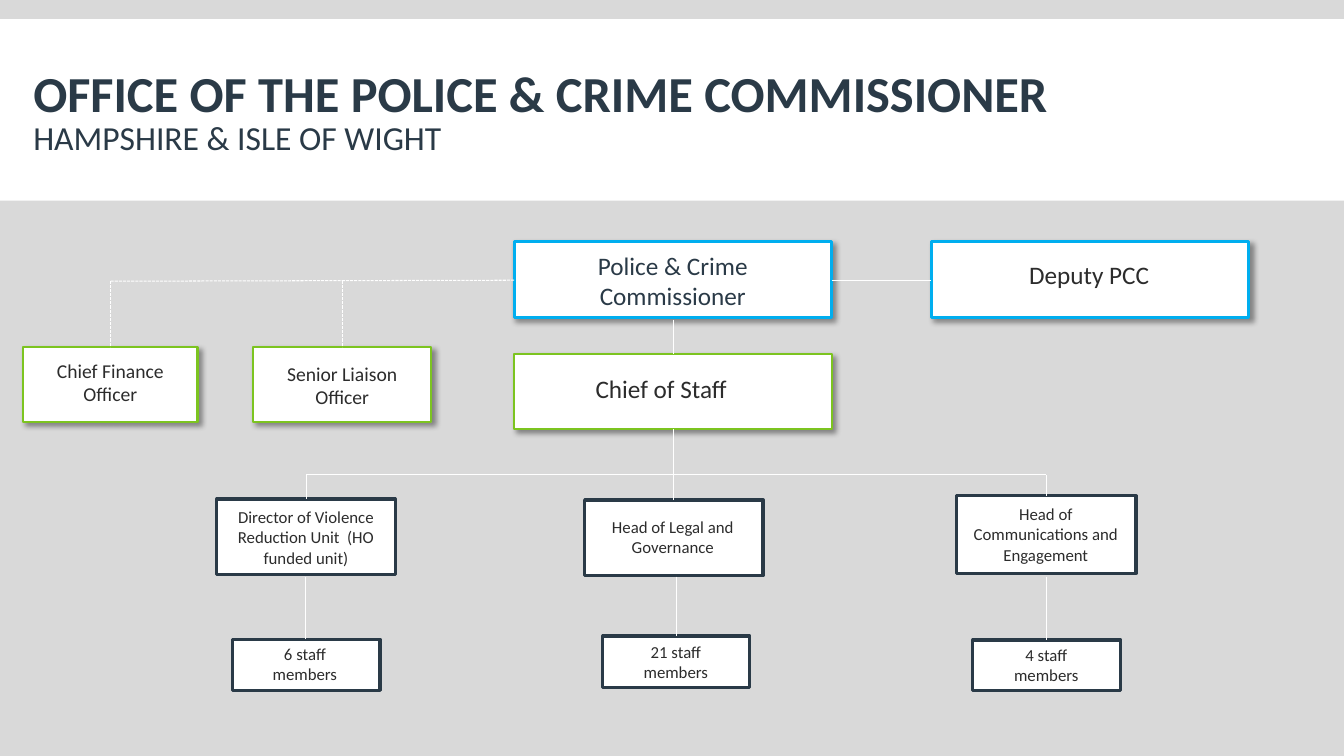
import dataclasses

import lxml.etree
import pptx
import pptx.dml.color
import pptx.enum.dml
import pptx.enum.shapes
import pptx.enum.text
import pptx.oxml.ns
import pptx.util

COLUMNS, ROWS = 133.33, 75


@dataclasses.dataclass(frozen=True)
class Theme:
    font: str = "Calibri"
    background: str = "D9D9D9"
    white: str = "FFFFFF"
    navy: str = "2A3A47"
    text: str = "2C2C2C"
    blue: str = "00AEEF"
    green: str = "7CC420"
    title: int = 36
    subtitle: int = 24
    leader: int = 18
    officer: int = 14
    team: int = 12
    thick: float = 2.25
    medium: float = 1.5
    thin: float = 0.75


class Chart:
    def __init__(self, presentation, theme):
        self.theme = theme
        self.column = presentation.slide_width / COLUMNS
        self.row = presentation.slide_height / ROWS
        self.slide = presentation.slides.add_slide(presentation.slide_layouts[5])
        self.paint(self.slide.background.fill, theme.background)

    def across(self, columns):
        return pptx.util.Emu(round(columns * self.column))

    def down(self, rows):
        return pptx.util.Emu(round(rows * self.row))

    def frame(self, left, top, width, height):
        return self.across(left), self.down(top), self.across(width), self.down(height)

    def paint(self, fill, color):
        fill.solid()
        fill.fore_color.rgb = pptx.dml.color.RGBColor.from_string(color)

    def add_text(self, paragraph, text, size, color, bold=False):
        run = paragraph.add_run()
        run.text = text
        run.font.name = self.theme.font
        run.font.size = pptx.util.Pt(size)
        run.font.bold = bold
        run.font.color.rgb = pptx.dml.color.RGBColor.from_string(color)

    def effects(self, shape):
        return lxml.etree.SubElement(
            shape.element.spPr, pptx.oxml.ns.qn("a:effectLst"))

    def box(self, area, line=None, width=0, shadow=False):
        shape = self.slide.shapes.add_shape(
            pptx.enum.shapes.MSO_SHAPE.RECTANGLE, *self.frame(*area))
        self.paint(shape.fill, self.theme.white)
        if line:
            self.paint(shape.line.fill, line)
            shape.line.width = pptx.util.Pt(width)
        else:
            shape.line.fill.background()
        effects = self.effects(shape)
        if shadow:
            outer = lxml.etree.SubElement(
                effects, pptx.oxml.ns.qn("a:outerShdw"),
                blurRad=str(pptx.util.Pt(4)), dist=str(pptx.util.Pt(3)),
                dir="2700000", algn="tl", rotWithShape="0")
            color = lxml.etree.SubElement(
                outer, pptx.oxml.ns.qn("a:srgbClr"), val="000000")
            lxml.etree.SubElement(color, pptx.oxml.ns.qn("a:alpha"), val="40000")
        return shape

    def label(self, area, text, size, color=None, align="CENTER"):
        shape = self.slide.shapes.add_textbox(*self.frame(*area))
        shape.text_frame.word_wrap = True
        paragraph = shape.text_frame.paragraphs[0]
        paragraph.alignment = pptx.enum.text.PP_ALIGN[align]
        self.add_text(paragraph, text, size, color or self.theme.text)

    def link(self, start, end, dashed=False):
        connector = self.slide.shapes.add_connector(
            pptx.enum.shapes.MSO_CONNECTOR.STRAIGHT,
            self.across(start[0]), self.down(start[1]),
            self.across(end[0]), self.down(end[1]))
        self.paint(connector.line.fill, self.theme.white)
        connector.line.width = pptx.util.Pt(self.theme.thin)
        if dashed:
            connector.line.dash_style = pptx.enum.dml.MSO_LINE.SQUARE_DOT
        self.effects(connector)

    def heading(self, title, subtitle):
        theme = self.theme
        shape = self.slide.shapes.title
        band = self.box((0, 1.9, COLUMNS, 18))
        shape.element.addprevious(band.element)
        shape.left, shape.top, shape.width, shape.height = self.frame(
            2.3, 3.1, 128.8, 16.5)
        text_frame = shape.text_frame
        text_frame.word_wrap = True
        text_frame.auto_size = pptx.enum.text.MSO_AUTO_SIZE.NONE
        text_frame.vertical_anchor = pptx.enum.text.MSO_ANCHOR.MIDDLE
        paragraph = text_frame.paragraphs[0]
        paragraph.alignment = pptx.enum.text.PP_ALIGN.LEFT
        paragraph.line_spacing = 0.85
        self.add_text(paragraph, title, theme.title, theme.navy, bold=True)
        paragraph.add_line_break()
        lxml.etree.SubElement(
            paragraph._p[-1], pptx.oxml.ns.qn("a:rPr"), sz=str(theme.title * 100))
        self.add_text(paragraph, subtitle, theme.subtitle, theme.navy)


def main():
    presentation = pptx.Presentation()
    presentation.slide_width = pptx.util.Inches(13.33)
    presentation.slide_height = pptx.util.Inches(7.5)
    theme = Theme()
    chart = Chart(presentation, theme)
    chart.heading("OFFICE OF THE POLICE & CRIME COMMISSIONER",
                  "HAMPSHIRE & ISLE OF WIGHT")

    leader_size = (31.5, 7.5)
    for left, top, line, width in (
        (51, 24, theme.blue, theme.thick),
        (92.4, 24, theme.blue, theme.thick),
        (51, 35.1, theme.green, theme.medium),
    ):
        chart.box((left, top, *leader_size), line, width, shadow=True)
    chart.label((57, 24.3, 19.5, 7.1), "Police & Crime Commissioner",
                theme.leader, theme.navy)
    chart.label((99.4, 25.2, 17.3, 4), "Deputy PCC", theme.leader)
    chart.label((58.1, 36.5, 17.4, 4), "Chief of Staff", theme.leader, align="LEFT")

    for left, width, text_top, text, center in (
        (2.3, 17.3, 35.1, "Chief Finance Officer", 11),
        (25.1, 17.7, 35.4, "Senior Liaison Officer", 34),
    ):
        chart.box((left, 34.4, width, 7.5), theme.green, theme.medium, shadow=True)
        chart.label((left, text_top, width, 5.7), text, theme.officer)
        chart.link((center, 27.85), (center, 34.4), dashed=True)
    chart.link((51, 27.8), (11, 27.9), dashed=True)

    chart.link((82.5, 27.8), (92.4, 27.8))
    chart.link((66.8, 31.7), (66.8, 35.1))
    chart.link((30.4, 47.1), (103.8, 47.1))

    teams = (
        ((21.5, 49.5, 17.7, 7.5), (21.5, 49.8, 17.7, 7.1),
         "Director of Violence Reduction Unit  (HO funded unit)",
         (23.1, 63.4, 14.6, 5.1), (25.1, 63.4, 10.3, 5), "6 staff members",
         30.4, 47.1, 30.3),
        ((58, 49.6, 17.7, 7.5), (58.5, 50.8, 16.5, 5),
         "Head of Legal and Governance",
         (59.8, 63.1, 14.6, 5.1), (62.2, 63.2, 9.7, 5), "21 staff members",
         66.8, 42.6, 67.1),
        ((94.9, 49.2, 17.8, 7.7), (95.5, 49.5, 16.5, 7.1),
         "Head of Communications and Engagement",
         (96.5, 63.5, 14.7, 5), (98.6, 63.5, 10.4, 5), "4 staff members",
         103.8, 47.1, 103.8),
    )
    for (head, head_text, role, staff, staff_text, members,
         entry, entry_top, descent) in teams:
        chart.box(head, theme.navy, theme.thick)
        chart.label(head_text, role, theme.team)
        chart.box(staff, theme.navy, theme.thick)
        chart.label(staff_text, members, theme.team)
        chart.link((entry, entry_top), (entry, head[1]))
        chart.link((descent, 57.2), (descent, staff[1]))

    presentation.save("out.pptx")


if __name__ == "__main__":
    main()
